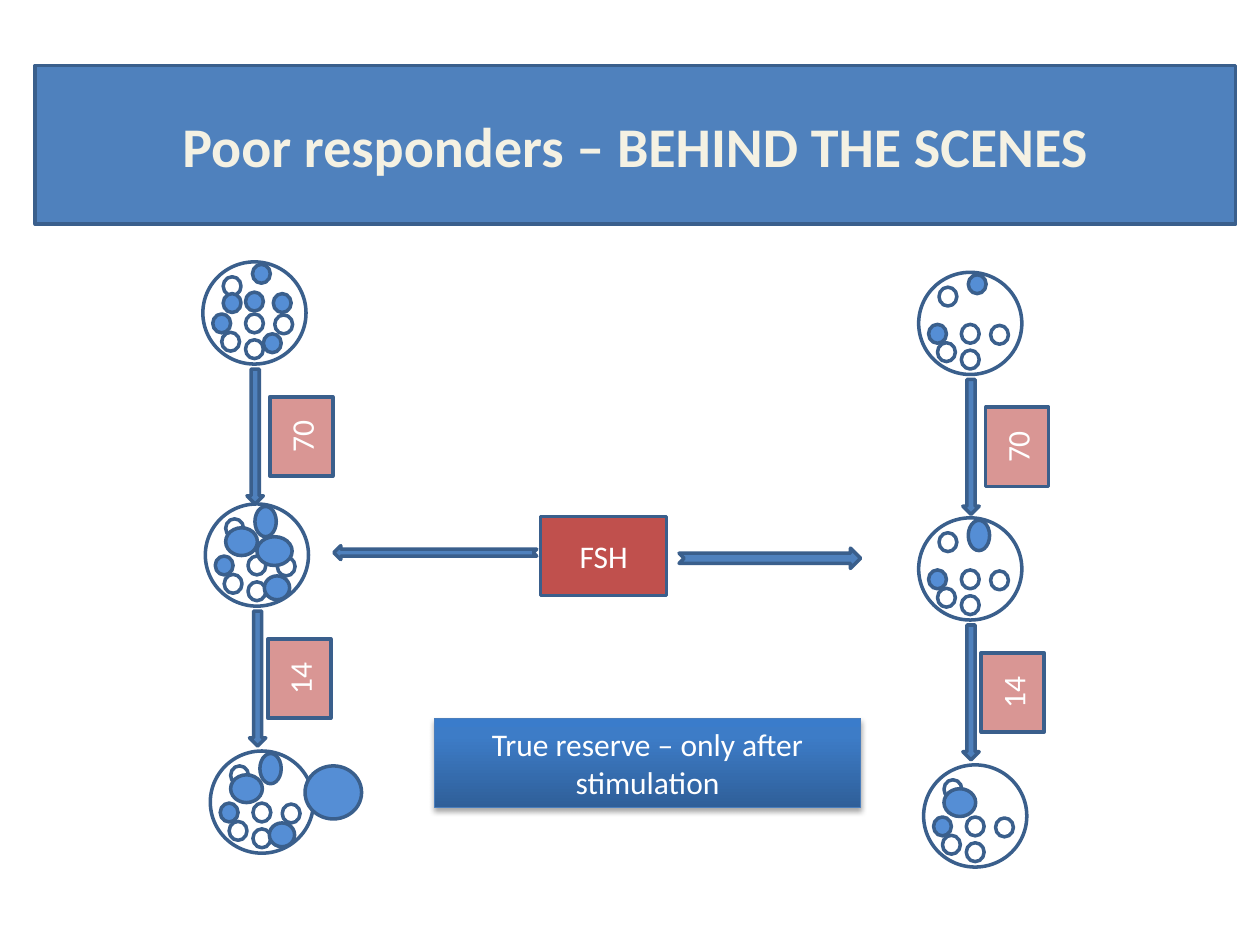
from copy import deepcopy
from lxml.etree import SubElement
from pptx import Presentation
from pptx.dml.color import RGBColor
from pptx.enum.shapes import MSO_SHAPE as Kind
from pptx.enum.text import MSO_ANCHOR as Anchor, PP_ALIGN as Align
from pptx.oxml.ns import qn
from pptx.util import Cm, Pt

BLUE = RGBColor(0x4F, 0x81, 0xBD)
EDGE = RGBColor(0x3A, 0x5F, 0x8C)
GROWN = RGBColor(0x55, 0x8E, 0xD5)
PINK = RGBColor(0xD9, 0x96, 0x94)
RED = RGBColor(0xC0, 0x50, 0x4D)
WHITE = RGBColor(0xFF, 0xFF, 0xFF)
CREAM = RGBColor(0xF4, 0xF1, 0xE3)
RIM = RGBColor(0x4B, 0x7E, 0xBC)
SHADES = [
    (0, RGBColor(0x2F, 0x5F, 0x99)),
    (0.8, RGBColor(0x3D, 0x7C, 0xC7)),
    (1, RGBColor(0x3A, 0x7C, 0xCB)),
]

TITLE = "Poor responders – BEHIND THE SCENES"
NOTE = "True reserve – only after stimulation"

OVARY = (2.08, 2.06)
SMALL = (0.36, 0.38)
RESTING = [(1.45, 1.07), (0.41, 0.3), (0.86, 1.05), (0.86, 1.57), (0.38, 1.42)]
DOT = (0.2, 1.05, *SMALL)
TOP = (1, 0.05, *SMALL)
TALL = (1, 0.05, 0.43, 0.61)
WIDE = (1.04, 0.66, 0.71, 0.58)
MID = (0.41, 0.48, 0.64, 0.56)
LOW = (1.19, 1.45, 0.51, 0.48)
LEAD = (1.91, 0.3, 1.14, 1.07)
EXTRA = [(x, y, *SMALL) for x, y in
         [(0.86, 0.61), (1.42, 0.64), (0.41, 0.64), (1.22, 1.45)]]

STAGES = [
    (4.09, 5.28, [TOP, DOT, *EXTRA], "70"),
    (4.14, 10.16, [TALL, WIDE, DOT, MID, LOW], "14"),
    (4.24, 15.14, [TALL, LEAD, DOT, MID, LOW], None),
    (18.52, 5.49, [TOP, DOT], "70"),
    (18.52, 10.44, [TALL, DOT], "14"),
    (18.62, 15.42, [DOT, MID], None),
]
SHIFT = {"70": 1.35, "14": 1.26}

deck = Presentation()
deck.slide_width, deck.slide_height = Cm(25.4), Cm(19.05)
slide = deck.slides.add_slide(deck.slide_layouts[5])


def paint(shape, fill, edge=EDGE, width=2):
    if fill is None:
        shape.fill.background()
    else:
        shape.fill.solid()
        shape.fill.fore_color.rgb = fill
    shape.line.color.rgb = edge
    shape.line.width = Pt(width)


def draw(kind, x, y, w, h, fill=None):
    shape = slide.shapes.add_shape(kind, Cm(x), Cm(y), Cm(w), Cm(h))
    shape.shadow.inherit = False
    paint(shape, fill)
    return shape


def write(shape, text, size=18, color=WHITE, bold=False):
    frame = shape.text_frame
    frame.text = text
    frame.word_wrap = True
    frame.vertical_anchor = Anchor.MIDDLE
    para = frame.paragraphs[0]
    para.alignment = Align.CENTER
    font = para.runs[0].font
    font.name, font.size, font.bold = "Calibri", Pt(size), bold
    font.color.rgb = color


def stage(x, y, grown, days):
    draw(Kind.OVAL, x, y, *OVARY)
    for dx, dy in RESTING:
        draw(Kind.OVAL, x + dx, y + dy, *SMALL)
    for dx, dy, w, h in grown:
        draw(Kind.OVAL, x + dx, y + dy, w, h, GROWN)
    if days:
        draw(Kind.DOWN_ARROW, x + 0.89, y + 2.16, 0.33, 2.72, BLUE)
        label = draw(Kind.RECTANGLE, x + SHIFT[days], y + 2.72, 1.27, 1.6, PINK)
        write(label, days)
        label.text_frame._txBody.bodyPr.set("vert", "vert270")


def shade(shape):
    fill = shape.fill
    fill.gradient()
    fill.gradient_angle = 90
    stops = shape._element.xpath(".//a:gsLst")[0]
    stops.insert(1, deepcopy(stops[0]))
    for stop, (place, color) in zip(fill.gradient_stops, SHADES):
        stop.position = place
        stop.color.rgb = color
    effects = shape._element.spPr.find(qn("a:effectLst"))
    shadow = SubElement(effects, qn("a:outerShdw"), blurRad="40000",
                        dist="23000", dir="5400000", rotWithShape="0")
    black = SubElement(shadow, qn("a:srgbClr"), val="000000")
    SubElement(black, qn("a:alpha"), val="35000")


title = slide.shapes.title
title.left, title.top, title.width, title.height = Cm(0.71), Cm(1.32), Cm(24.2), Cm(3.2)
paint(title, BLUE)
write(title, TITLE, 32, CREAM, True)

for item in STAGES:
    stage(*item)

write(draw(Kind.RECTANGLE, 10.9, 10.41, 2.54, 1.6, RED), "FSH")
draw(Kind.NOTCHED_RIGHT_ARROW, 6.73, 11, 4.09, 0.28, BLUE).rotation = 180
draw(Kind.NOTCHED_RIGHT_ARROW, 13.69, 11.05, 3.66, 0.41, BLUE)

note = draw(Kind.RECTANGLE, 8.76, 14.48, 8.59, 1.8, BLUE)
paint(note, BLUE, RIM, 0.75)
shade(note)
write(note, NOTE)

deck.save("out.pptx")
